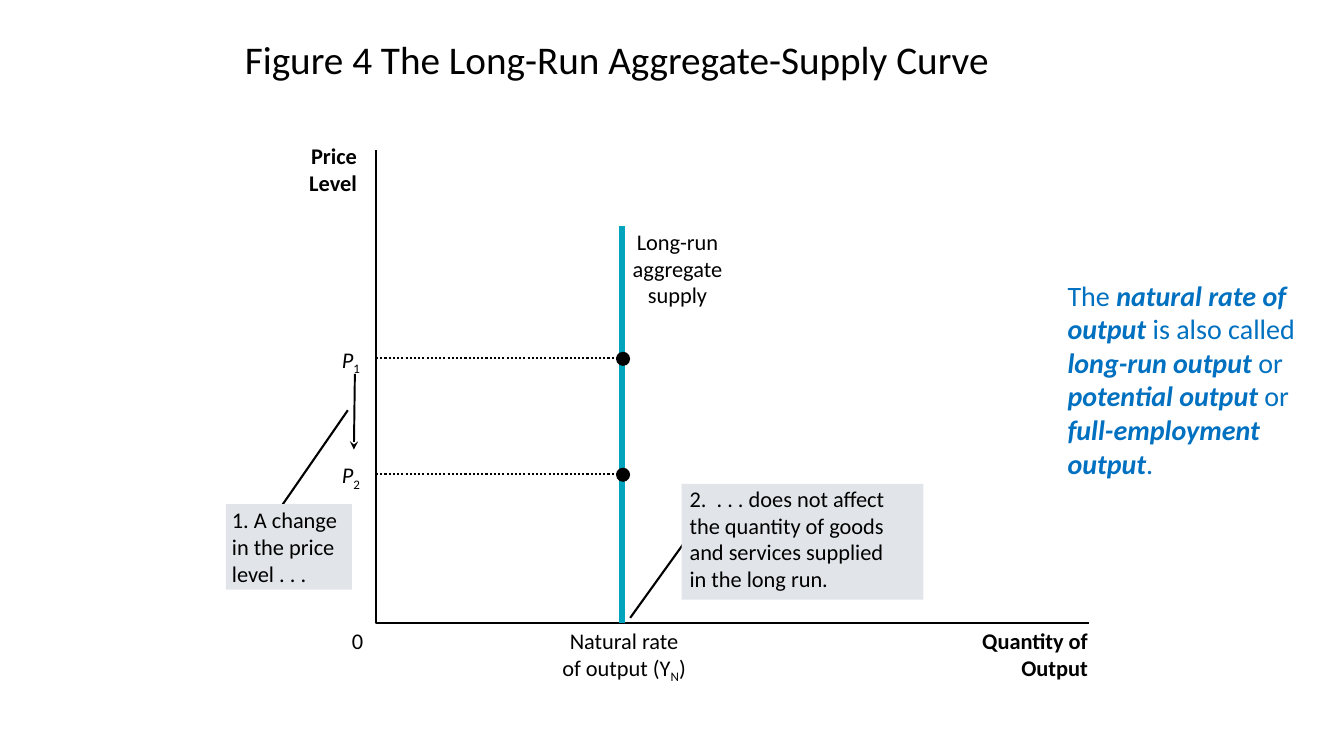
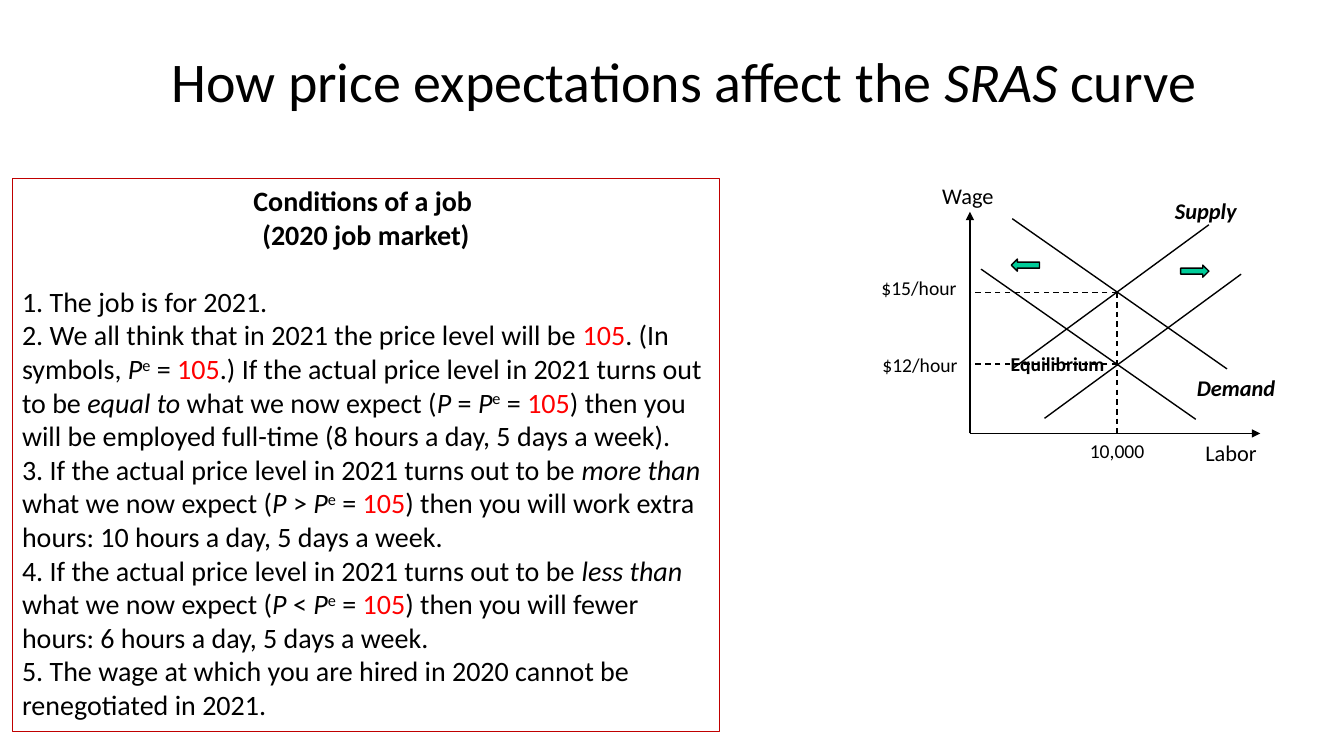
from dataclasses import dataclass
from lxml import etree
from pptx import Presentation
from pptx.dml.color import RGBColor
from pptx.enum import dml, shapes, text
from pptx.oxml import ns
from pptx.util import Emu, Pt

SCALE = 9144
LEFT, MID, RIGHT = text.PP_ALIGN.LEFT, text.PP_ALIGN.CENTER, text.PP_ALIGN.RIGHT
TOP, CENTRE = text.MSO_ANCHOR.TOP, text.MSO_ANCHOR.MIDDLE
DOT, DASH = dml.MSO_LINE.ROUND_DOT, dml.MSO_LINE.DASH
FORM = shapes.MSO_SHAPE
PAD, FLAT = (10, 5, 10, 5), (0, 0, 0, 0)


@dataclass(frozen=True)
class Theme:
    face: str = "Calibri"
    ink: str = "000000"
    note: str = "0070C0"
    curve: str = "00A4BC"
    panel: str = "E1E5E9"
    frame: str = "C00000"
    alert: str = "FF0000"
    arrow: str = "00CC99"
    small: int = 14
    label: int = 16
    body: int = 20
    head: int = 28
    title: int = 40


def px(n):
    return Emu(round(n * SCALE))


def rgb(code):
    return RGBColor.from_string(code)


class Deck:
    def __init__(self, theme):
        self.theme = theme
        self.show = Presentation()
        self.show.slide_width, self.show.slide_height = px(1333), px(750)
        self.page = None

    def slide(self):
        self.page = self.show.slides.add_slide(self.show.slide_layouts[6]).shapes

    def pen(self, line, color, width):
        line.color.rgb = rgb(color)
        line.width = Pt(width)

    def run(self, para, item):
        words, style = (item, "") if isinstance(item, str) else item
        run = para.add_run()
        run.text = words
        if "b" in style:
            run.font.bold = True
        if "i" in style:
            run.font.italic = True
        if "r" in style:
            run.font.color.rgb = rgb(self.theme.alert)
        for mark, shift in (("^", "30000"), ("_", "-25000")):
            if mark in style:
                run._r.get_or_add_rPr().set("baseline", shift)

    def text(self, at, lines, size, style="", align=LEFT, color=None, pad=PAD,
             anchor=TOP, fill=None, edge=None, lead=None):
        box = self.page.add_textbox(*map(px, at))
        if fill:
            box.fill.solid()
            box.fill.fore_color.rgb = rgb(fill)
        if edge:
            self.pen(box.line, edge, 0.75)
        frame = box.text_frame
        frame.word_wrap = True
        frame.vertical_anchor = anchor
        (frame.margin_left, frame.margin_top,
         frame.margin_right, frame.margin_bottom) = map(px, pad)
        for n, items in enumerate(lines):
            para = frame.add_paragraph() if n else frame.paragraphs[0]
            para.alignment = align
            if lead:
                para.line_spacing = lead
            font = para.font
            font.name, font.size = self.theme.face, Pt(size)
            font.color.rgb = rgb(color or self.theme.ink)
            font.bold, font.italic = "b" in style, "i" in style
            for item in [items] if isinstance(items, str) else items:
                self.run(para, item)
        return frame.paragraphs

    def title(self, at, items, size, align, lead):
        self.text(at, [items], size, align=align, anchor=CENTRE, lead=lead)

    def line(self, ends, width=1.0, color=None, dash=None, tip=None):
        link = self.page.add_connector(shapes.MSO_CONNECTOR.STRAIGHT, *map(px, ends))
        self.pen(link.line, color or self.theme.ink, width)
        if dash:
            link.line.dash_style = dash
        props = link._element.spPr
        if tip:
            tail = etree.SubElement(props.find(ns.qn("a:ln")), ns.qn("a:tailEnd"))
            tail.set("type", tip)
        etree.SubElement(props, ns.qn("a:effectLst"))

    def shape(self, form, at, fill, edge=None):
        item = self.page.add_shape(form, *map(px, at))
        item.shadow.inherit = False
        item.fill.solid()
        item.fill.fore_color.rgb = rgb(fill)
        if edge:
            self.pen(item.line, edge, 1)
        else:
            item.line.fill.background()

    def trace(self, start, *points):
        pen = self.page.build_freeform(*map(px, start))
        pen.add_line_segments([tuple(map(px, p)) for p in points], close=False)
        item = pen.convert_to_shape()
        item.shadow.inherit = False
        item.fill.background()
        self.pen(item.line, self.theme.ink, 1.5)


def supply(deck):
    look = deck.theme
    deck.slide()
    deck.title((233, 25, 900, 75), ["Figure 4 The Long-Run Aggregate-Supply Curve"],
               look.head, LEFT, 0.8)
    deck.trace((373, 149), (373, 618), (1080, 618))
    deck.line((352, 371, 351, 446), 1.38, tip="stealth")
    labels = (
        ((929, 622, 150, 54), ["Quantity of", "Output"], "b", RIGHT),
        ((539, 622, 160, 54),
         ["Natural rate", ["of output (Y", ("N", "_"), ")"]], "", MID),
        ((274, 141, 80, 54), ["Price", "Level"], "b", RIGHT),
        ((349, 622, 20, 27), ["0"], "", LEFT),
        ((622, 226, 100, 81), ["Long-run", "aggregate", "supply"], "", MID),
    )
    for at, lines, style, align in labels:
        deck.text(at, lines, look.label, style, align, pad=FLAT)
    deck.line((617, 224, 617, 618), 4.38, look.curve)
    for y, mark in ((355, "1"), (470, "2")):
        deck.line((373, y, 617, y), 1.5, dash=DOT)
        deck.shape(FORM.OVAL, (611, y - 6, 14, 14), look.ink)
        deck.text((339, y - 12, 30, 27), [[("P", "i"), (mark, "_")]],
                  look.label, pad=FLAT)
    calls = (
        ((345, 407, 271, 514), (224, 500, 125, 85), (6, 2, 6, 0),
         "1. A change in the price level . . ."),
        ((684, 531, 625, 613), (676, 480, 240, 115), (8, 1, 24, 0),
         "2.  . . . does not affect the quantity of goods "
         "and services supplied in the long run."),
    )
    for ends, at, pad, words in calls:
        deck.line(ends, 1.5)
        deck.text(at, [words], look.label, pad=pad, fill=look.panel)
    deck.text((1049, 271, 273, 212), [[
        "The ", ("natural rate of output ", "bi"), "is also called ",
        ("long-run output", "bi"), " or ", ("potential output", "bi"), " or ",
        ("full-employment output", "bi"), "."]], look.body, color=look.note)


def wages(deck):
    look = deck.theme
    deck.slide()
    deck.title((67, 17, 1222, 133),
               ["How price expectations affect the ", ("SRAS", "i"), " curve"],
               look.title, MID, 0.9)
    guess = [("P", "i"), ("e", "^"), " = ", ("105", "r")]

    def case(start, how, sign, end):
        return [start, (how + " ", "i"), "what we now expect (", ("P ", "i"),
                sign + " ", *guess, ") then you will " + end]

    level = "If the actual price level in 2021 turns out to be "
    paras = deck.text((12, 177, 702, 549), [
        "Conditions of a job ",
        "(2020 job market)",
        "1. The job is for 2021.",
        ["2. We all think that in 2021 the price level will be ", ("105", "r"),
         ". (In symbols, ", *guess,
         *case(".) " + level, "equal to", "=",
               "be employed full-time (8 hours a day, 5 days a week).")],
        case("3. " + level, "more than", ">",
             "work extra hours: 10 hours a day, 5 days a week."),
        case("4. " + level, "less than", "<",
             "fewer hours: 6 hours a day, 5 days a week."),
        "5. The wage at which you are hired in 2020 cannot be renegotiated in 2021.",
    ], look.body, edge=look.frame)
    for para in paras[:2]:
        para.alignment = MID
        para.font.bold = True
    paras[1].space_after = Pt(24)

    for end in ((1250, 430), (962, 210)):
        deck.line((962, 430, *end), tip="triangle")
    curves = (((1004, 217, 1217, 366), (-31, 50)),
              ((1004, 366, 1199, 223), (32, 49)))
    for (x, y, right, end), (dx, dy) in curves:
        deck.line((x, y, right, end))
        deck.line((x + dx, y + dy, right + dx, end + dy))
    labels = (
        ((897, 176, 126, 37), "Wage", look.label, ""),
        ((1158, 431, 126, 37), "Labor", look.label, ""),
        ((1133, 191, 126, 37), "Supply", look.label, "bi"),
        ((1163, 366, 126, 37), "Demand", look.label, "bi"),
        ((986, 344, 126, 34), "Equilibrium", look.small, "b"),
        ((1045, 431, 126, 34), "10,000", look.small, ""),
        ((862, 269, 99, 34), "$15/hour", look.small, ""),
        ((863, 345, 99, 34), "$12/hour", look.small, ""),
    )
    for at, words, size, style in labels:
        deck.text(at, [words], size, style, MID)
    for ends in ((1108, 290, 1108, 430), (1108, 290, 962, 290), (1108, 361, 962, 361)):
        deck.line(ends, dash=DASH)
    for form, x, y in ((FORM.RIGHT_ARROW, 1171, 263), (FORM.LEFT_ARROW, 1003, 257)):
        deck.shape(form, (x, y, 28, 12), look.arrow, look.ink)


def main():
    deck = Deck(Theme())
    supply(deck)
    wages(deck)
    deck.show.save("out.pptx")


if __name__ == "__main__":
    main()
